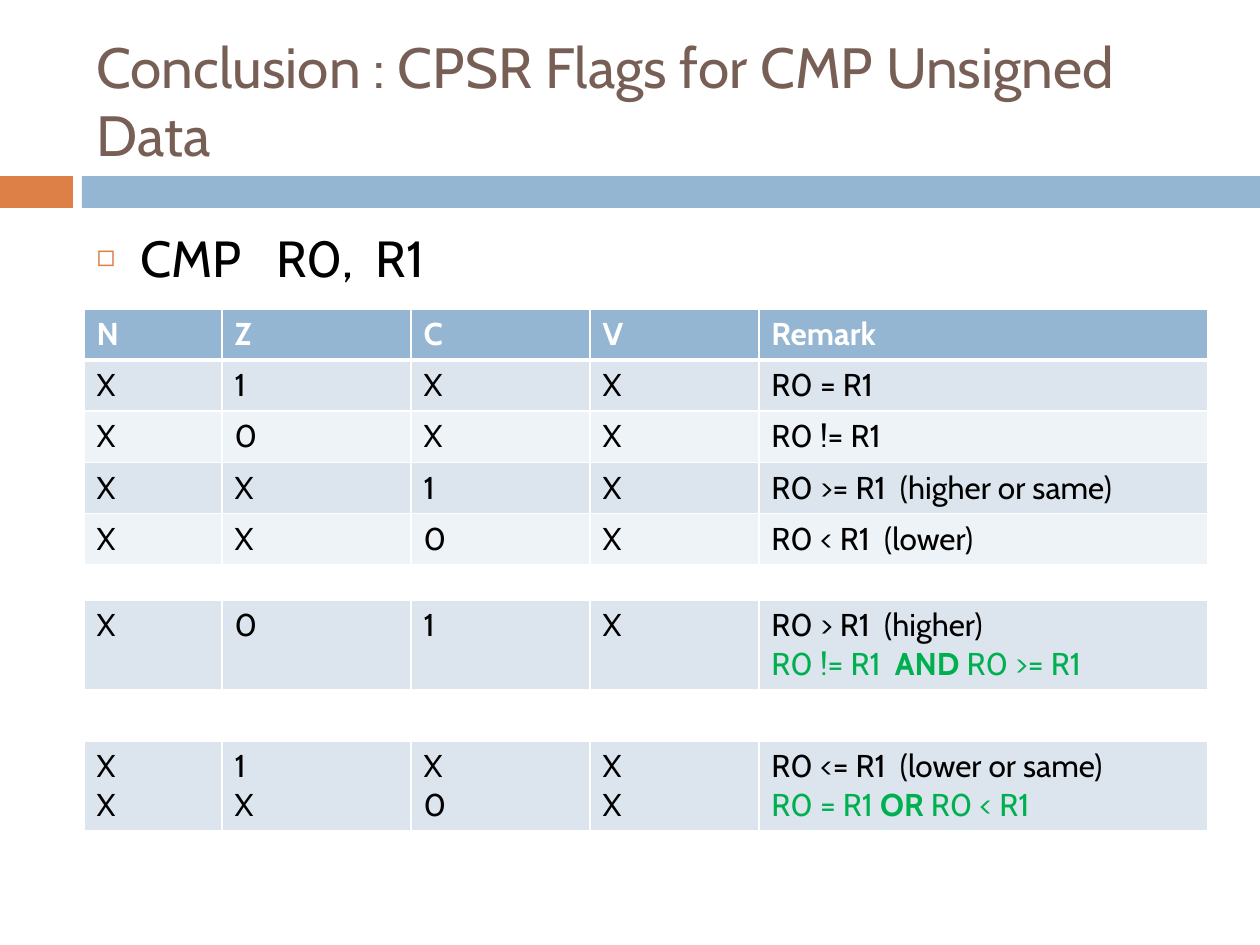
from lxml import etree
from pptx import Presentation
from pptx.dml.color import RGBColor
from pptx.enum.shapes import MSO_SHAPE
from pptx.enum.text import MSO_ANCHOR, MSO_AUTO_SIZE, PP_ALIGN
from pptx.oxml.ns import qn
from pptx.util import Pt

RECTANGLE = MSO_SHAPE.RECTANGLE
TOP, MIDDLE = MSO_ANCHOR.TOP, MSO_ANCHOR.MIDDLE
LEFT = PP_ALIGN.LEFT
NO_AUTOFIT = MSO_AUTO_SIZE.NONE

ORANGE = RGBColor(0xDD, 0x80, 0x47)
BLUE = RGBColor(0x94, 0xB6, 0xD2)
BROWN = RGBColor(0x77, 0x5F, 0x55)
GREEN = RGBColor(0x00, 0xB0, 0x50)
DARK_BAND = RGBColor(0xDC, 0xE5, 0xEE)
LIGHT_BAND = RGBColor(0xEE, 0xF3, 0xF7)
BLACK = RGBColor(0, 0, 0)
WHITE = RGBColor(0xFF, 0xFF, 0xFF)

FONT = "Cabin"
PX = 914400 / 126


def add_text(paragraph, text, size, color, bold=False):
    run = paragraph.add_run()
    run.text = text
    formats = {"name": FONT, "size": Pt(size), "bold": bold}
    for name, value in formats.items():
        setattr(run.font, name, value)
    run.font.color.rgb = color


def add_border(cell, side, width):
    line = etree.SubElement(cell._tc.get_or_add_tcPr(), qn(f"a:ln{side}"), w=str(Pt(width)))
    fill = etree.SubElement(line, qn("a:solidFill"))
    etree.SubElement(fill, qn("a:srgbClr"), val=str(WHITE))


presentation = Presentation()
presentation.slide_width = round(1260 * PX)
presentation.slide_height = round(945 * PX)
slide = presentation.slides.add_slide(presentation.slide_layouts[1])

# Bars under the title
for left, width, color in ((0, 73, ORANGE), (82, 1178, BLUE)):
    bar = slide.shapes.add_shape(
        RECTANGLE, *(round(n * PX) for n in (left, 176, width, 32)))
    bar.shadow.inherit = False
    bar.fill.solid()
    bar.fill.fore_color.rgb = color
    bar.line.fill.background()

# Title and instruction
title, body = slide.placeholders
for shape, top, height, anchor, text, size, color in (
    (title, 32, 136, MIDDLE, "Conclusion : CPSR Flags for CMP Unsigned Data", 32.4, BROWN),
    (body, 220, 620, TOP, "CMP   R0,  R1", 29, BLACK),
):
    box = {"left": 84, "top": top, "width": 1124, "height": height}
    for name, value in box.items():
        setattr(shape, name, round(value * PX))
    frame = shape.text_frame
    frame.auto_size = NO_AUTOFIT
    frame.vertical_anchor = anchor
    frame.paragraphs[0].alignment = LEFT
    add_text(frame.paragraphs[0], text, size, color)

# Square bullet of the instruction
paragraph = body.text_frame.paragraphs[0]
paragraph.space_before = Pt(7)
properties = paragraph._p.get_or_add_pPr()
indent = round(44 * PX)
properties.set("marL", str(indent))
properties.set("indent", str(-indent))
bullet_color = etree.SubElement(properties, qn("a:buClr"))
etree.SubElement(bullet_color, qn("a:srgbClr"), val=str(ORANGE))
etree.SubElement(properties, qn("a:buSzPct"), val="60000")
etree.SubElement(properties, qn("a:buChar"), char="◻")

# Flag tables: top, row height, has a header, rows.
# A cell is a list of lines; a tuple is a green line with its middle part bold.
column_widths = (138, 189, 179, 169, 449)
flag_rows = [
    ("N", "Z", "C", "V", "Remark"),
    ("X", "1", "X", "X", "R0 = R1"),
    ("X", "0", "X", "X", "R0 != R1"),
    ("X", "X", "1", "X", "R0 >= R1  (higher or same)"),
    ("X", "X", "0", "X", "R0 < R1  (lower)"),
]
tables = (
    (309, 51, True, [[[text] for text in row] for row in flag_rows]),
    (600, 88, False, [[["X"], ["0"], ["1"], ["X"],
                       ["R0 > R1  (higher)", ("R0 != R1  ", "AND", " R0 >= R1")]]]),
    (741, 88, False, [[["X", "X"], ["1", "X"], ["X", "0"], ["X", "X"],
                       ["R0 <= R1  (lower or same)", ("R0 = R1 ", "OR", " R0 < R1")]]]),
)
for top, row_height, has_header, rows in tables:
    frame = slide.shapes.add_table(
        len(rows), len(column_widths),
        *(round(n * PX) for n in (84, top, sum(column_widths), row_height * len(rows))))
    table = frame.table
    table.first_row = has_header
    for column, width in zip(table.columns, column_widths):
        column.width = round(width * PX)
    for row_index, row in enumerate(rows):
        table.rows[row_index].height = round(row_height * PX)
        is_header = has_header and row_index == 0
        if is_header:
            fill = BLUE
        else:
            fill = LIGHT_BAND if row_index and row_index % 2 == 0 else DARK_BAND
        for column_index, lines in enumerate(row):
            cell = table.cell(row_index, column_index)
            # Borders come before the fill in the cell properties
            for side in "LRTB":
                below_header = side == "B" and is_header
                above_first = side == "T" and has_header and row_index == 1
                add_border(cell, side, 3 if below_header or above_first else 1)
            cell.fill.solid()
            cell.fill.fore_color.rgb = fill
            for line_index, line in enumerate(lines):
                paragraph = (cell.text_frame.add_paragraph() if line_index
                             else cell.text_frame.paragraphs[0])
                if isinstance(line, tuple):
                    for part_index, part in enumerate(line):
                        add_text(paragraph, part, 18, GREEN, part_index == 1)
                else:
                    add_text(paragraph, line, 18, WHITE if is_header else BLACK, is_header)

presentation.save("out.pptx")
